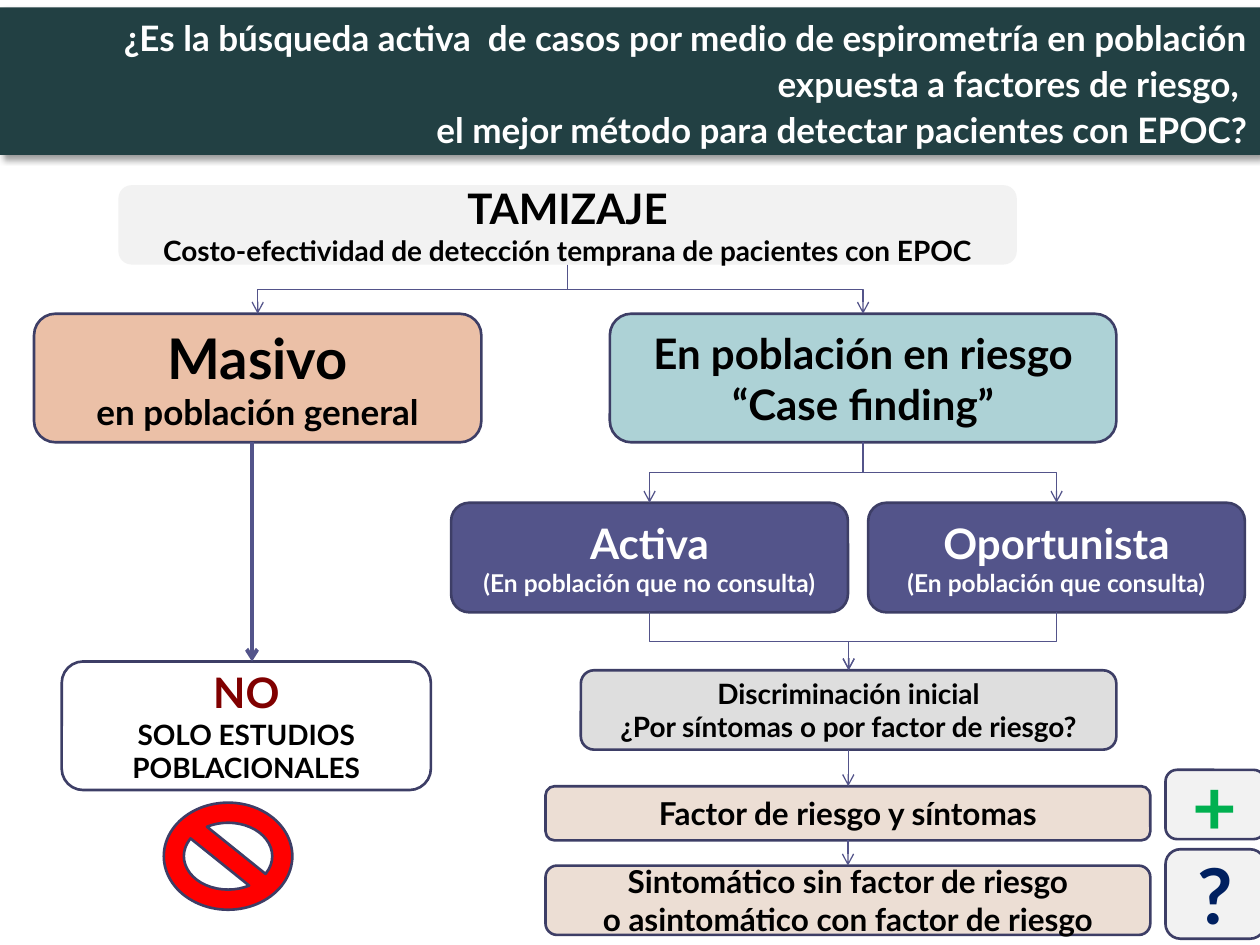
"""Build the COPD screening decision flow slide."""
from lxml.etree import SubElement
from pptx import Presentation
from pptx.dml.color import RGBColor
from pptx.enum.shapes import MSO_CONNECTOR as Connector, MSO_SHAPE as Preset
from pptx.enum.text import MSO_ANCHOR as Anchor, PP_ALIGN as Align
from pptx.oxml.ns import qn
from pptx.util import Inches, Pt

FONT = "Lato"
COLUMNS, ROWS = 100, 75
CELL = Inches(10) // COLUMNS
COLORS = {
    "black": "000000", "white": "FFFFFF", "teal": "224043", "mist": "F2F2F2",
    "peach": "EBC0A7", "aqua": "ADD2D6", "gray": "DEDEDE", "violet": "53548A",
    "outline": "3D3E66", "sand": "ECDED4", "maroon": "800000",
    "green": "00B050", "navy": "002060", "red": "FF0000",
}
TITLE = ("¿Es la búsqueda activa  de casos por medio de espirometría en población "
         "expuesta a factores de riesgo, \vel mejor método para detectar pacientes con EPOC?")

# name: (left, top, width, height), fill, [(text, size, colour)]
BOXES = {
    "screening": ((9.4, 14.7, 71.3, 6.3), "mist", [
        ("TAMIZAJE", 24, "black"),
        ("Costo-efectividad de detección temprana de pacientes con EPOC", 16, "black")]),
    "mass": ((2.7, 24.9, 35.5, 10.2), "peach", [
        ("Masivo", 32, "black"), ("en población general", 20, "black")]),
    "at_risk": ((48.4, 24.9, 40.2, 10.2), "aqua", [
        ("En población en riesgo", 24, "black"), ("“Case finding”", 24, "black")]),
    "active": ((35.8, 39.9, 31.5, 8.7), "violet", [
        ("Activa", 24, "white"), ("(En población que no consulta)", 14, "white")]),
    "opportunistic": ((68.9, 39.9, 29.9, 8.7), "violet", [
        ("Oportunista", 24, "white"), ("(En población que consulta)", 14, "white")]),
    "rejected": ((4.9, 52.5, 29.3, 10.2), "white", [
        ("NO", 24, "maroon"), ("SOLO ESTUDIOS POBLACIONALES", 16, "black")]),
    "triage": ((46.1, 53.2, 42.5, 6.3), "gray", [
        ("Discriminación inicial", 16, "black"),
        ("¿Por síntomas o por factor de riesgo?", 16, "black")]),
    "both": ((43.3, 62.4, 48, 4.3), "sand", [("Factor de riesgo y síntomas", 18, "black")]),
    "either": ((43.3, 68.7, 48, 5.5), "sand", [
        ("Sintomático sin factor de riesgo", 18, "black"),
        ("o asintomático con factor de riesgo", 18, "black")]),
    "plus": ((92.5, 61.1, 7.9, 5.5), "mist", [("+", 44, "green")]),
    "question": ((92.5, 67.4, 7.9, 7.1), "mist", [("?", 44, "navy")]),
}
LINKS = [
    ("screening", "mass", 0.75), ("screening", "at_risk", 0.75),
    ("mass", "rejected", 2.25),
    ("at_risk", "active", 0.75), ("at_risk", "opportunistic", 0.75),
    ("active", "triage", 0.75), ("opportunistic", "triage", 0.75),
    ("triage", "both", 0.75), ("both", "either", 0.75),
]


def color(name):
    return RGBColor.from_string(COLORS[name])


def cells(*values):
    return [round(value * CELL) for value in values]


def add_figure(slide, preset, place, fill, outline="outline"):
    shape = slide.shapes.add_shape(preset, *cells(*place))
    shape.fill.solid()
    shape.fill.fore_color.rgb = color(fill)
    if outline:
        shape.line.color.rgb = color(outline)
        shape.line.width = Pt(1.5)
    else:
        shape.line.fill.background()
    shape.shadow.inherit = False
    return shape


def write_text(shape, text, size, ink, first=True, align=Align.CENTER, spacing=None):
    frame = shape.text_frame
    frame.word_wrap = True
    frame.vertical_anchor = Anchor.MIDDLE
    paragraph = frame.paragraphs[0] if first else frame.add_paragraph()
    paragraph.text = text
    paragraph.alignment = align
    paragraph.line_spacing = spacing
    for run in paragraph.runs:
        run.font.name, run.font.size, run.font.bold = FONT, Pt(size), True
        run.font.color.rgb = color(ink)


def add_title(slide):
    banner = add_figure(slide, Preset.RECTANGLE, (0, 0.6, COLUMNS, 11.7), "teal", outline=None)
    write_text(banner, TITLE, 20, "white", align=Align.RIGHT, spacing=1.1)
    effects = banner._element.spPr.find(qn("a:effectLst"))
    shadow = SubElement(effects, qn("a:outerShdw"), blurRad=str(Pt(4)), dist=str(Pt(3)),
                        dir="2700000", algn="tl", rotWithShape="0")
    shade = SubElement(shadow, qn("a:srgbClr"), val=COLORS["black"])
    SubElement(shade, qn("a:alpha"), val="40000")


def add_link(slide, source, target, width):
    left, top, wide, high = BOXES[source][0]
    start_x, start_y = left + wide / 2, top + high
    left, end_y, wide, _ = BOXES[target][0]
    end_x = left + wide / 2
    middle_x, middle_y = (start_x + end_x) / 2, (start_y + end_y) / 2
    run, drop = end_x - start_x, end_y - start_y
    if abs(run) < 1:
        link = slide.shapes.add_connector(
            Connector.STRAIGHT, *cells(middle_x, start_y, middle_x, end_y))
    else:
        reach = drop / 2 if run > 0 else -drop / 2
        link = slide.shapes.add_connector(Connector.ELBOW, *cells(
            middle_x + reach, middle_y - abs(run) / 2,
            middle_x - reach, middle_y + abs(run) / 2))
        link._element.spPr.find(qn("a:xfrm")).set("rot", "16200000" if run > 0 else "5400000")
    link.line.color.rgb = color("violet")
    link.line.width = Pt(width)
    properties = link._element.spPr
    SubElement(properties.find(qn("a:ln")), qn("a:tailEnd"), type="arrow")
    SubElement(properties, qn("a:effectLst"))


def main():
    presentation = Presentation()
    presentation.slide_width, presentation.slide_height = cells(COLUMNS, ROWS)
    slide = presentation.slides.add_slide(presentation.slide_layouts[6])
    add_title(slide)
    for name, (place, fill, lines) in BOXES.items():
        outline = None if name == "screening" else "outline"
        box = add_figure(slide, Preset.ROUNDED_RECTANGLE, place, fill, outline)
        for index, (text, size, ink) in enumerate(lines):
            write_text(box, text, size, ink, first=index == 0)
    for link in LINKS:
        add_link(slide, *link)
    add_figure(slide, Preset.NO_SYMBOL, (13, 63.7, 10.2, 8.5), "red")
    presentation.save("out.pptx")


if __name__ == "__main__":
    main()
